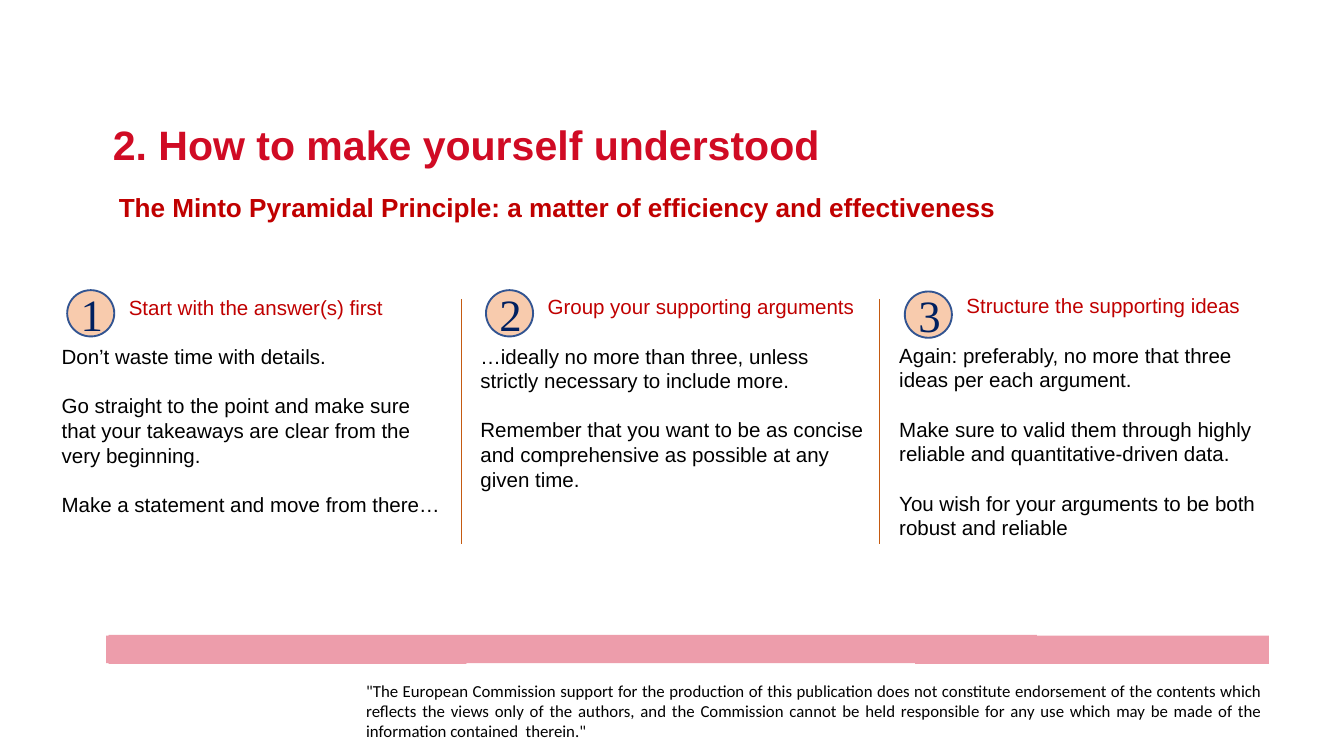
"""Build the slide on the Minto Pyramidal Principle."""
from dataclasses import dataclass

from lxml import etree
from pptx import Presentation
from pptx.dml.color import RGBColor
from pptx.enum.shapes import MSO_CONNECTOR, MSO_SHAPE
from pptx.enum.text import MSO_ANCHOR, MSO_AUTO_SIZE, PP_ALIGN
from pptx.oxml.ns import qn
from pptx.util import Cm, Pt

LEFT, CENTER, JUSTIFY = PP_ALIGN.LEFT, PP_ALIGN.CENTER, PP_ALIGN.JUSTIFY
TOP, MIDDLE = MSO_ANCHOR.TOP, MSO_ANCHOR.MIDDLE
NO_FIT = MSO_AUTO_SIZE.NONE
OVAL, STRAIGHT = MSO_SHAPE.OVAL, MSO_CONNECTOR.STRAIGHT


@dataclass(frozen=True)
class Theme:
    sans: str = "Arial"
    serif: str = "Times New Roman"
    small: str = "Calibri"
    title: str = "D00B24"
    accent: str = "C00000"
    text: str = "000000"
    digit: str = "002060"
    disc: str = "F8CBAD"
    ring: str = "325491"
    rule: str = "C55A11"
    band: str = "ED9DAB"
    title_size: int = 44
    sub_size: int = 28
    body_size: int = 22
    digit_size: int = 48
    note_size: int = 18
    leading: float = 1.2


class Page:
    def __init__(self, slide, theme):
        self.slide, self.theme = slide, theme

    def add_text(self, para, text, font, size, color, bold=False, align=LEFT):
        para.alignment = align
        run = para.add_run()
        run.text = text
        run.font.name, run.font.size, run.font.bold = font, Pt(size), bold
        run.font.color.rgb = RGBColor.from_string(color)

    def place(self, shape, left, top, width, height):
        shape.left, shape.top = Cm(left), Cm(top)
        shape.width, shape.height = Cm(width), Cm(height)

    def frame(self, left, top, width, height):
        box = self.slide.shapes.add_textbox(Cm(left), Cm(top), Cm(width), Cm(height))
        box.text_frame.word_wrap = True
        return box.text_frame

    def paint(self, shape, color):
        shape.shadow.inherit = False
        shape.fill.solid()
        shape.fill.fore_color.rgb = RGBColor.from_string(color)

    def title(self, text, *area):
        t, shape = self.theme, self.slide.shapes.title
        self.place(shape, *area)
        frame = shape.text_frame
        frame.auto_size, frame.vertical_anchor = NO_FIT, TOP
        para = frame.paragraphs[0]
        para.line_spacing = Pt(t.title_size * t.leading)
        self.add_text(para, text, t.sans, t.title_size, t.title, True)

    def lead(self, text, *area):
        t, para = self.theme, self.frame(*area).paragraphs[0]
        para.line_spacing = Pt(t.sub_size * t.leading)
        self.add_text(para, text, t.sans, t.sub_size, t.accent, True)

    def column(self, head, body, *area):
        t, frame = self.theme, self.frame(*area)
        gap = Pt(t.body_size * t.leading)
        para = frame.paragraphs[0]
        para.line_spacing = gap
        para._p.get_or_add_pPr().set("marL", str(Cm(2.54)))
        self.add_text(para, head, t.sans, t.body_size, t.accent)
        for text in body:
            para = frame.add_paragraph()
            para.line_spacing = para.space_before = gap
            self.add_text(para, text, t.sans, t.body_size, t.text)

    def badge(self, text, left, top, width, height):
        t = self.theme
        disc = self.slide.shapes.add_shape(OVAL, Cm(left), Cm(top), Cm(width), Cm(height))
        self.paint(disc, t.disc)
        disc.line.color.rgb = RGBColor.from_string(t.ring)
        disc.line.width = Pt(2)
        disc.text_frame.vertical_anchor = MIDDLE
        self.add_text(disc.text_frame.paragraphs[0], text, t.serif, t.digit_size,
                      t.digit, align=CENTER)

    def rule(self, left, top, bottom):
        line = self.slide.shapes.add_connector(
            STRAIGHT, Cm(left), Cm(top), Cm(left), Cm(bottom))
        line.line.color.rgb = RGBColor.from_string(self.theme.rule)
        line.line.width = Pt(0.75)
        etree.SubElement(line._element.spPr, qn("a:effectLst"))

    def band(self, points):
        start, *rest = [(Cm(x), Cm(y)) for x, y in points]
        outline = self.slide.shapes.build_freeform(*start)
        outline.add_line_segments(rest)
        shape = outline.convert_to_shape()
        self.paint(shape, self.theme.band)
        shape.line.fill.background()

    def note(self, text, *area):
        t, frame = self.theme, self.frame(*area)
        frame.margin_left = frame.margin_right = 0
        frame.margin_top = frame.margin_bottom = 0
        para = frame.paragraphs[0]
        para.line_spacing = 0.98
        self.add_text(para, text, t.small, t.note_size, t.text, align=JUSTIFY)


BAND = [
    (47.96, 24.03), (39.19, 24.03), (39.19, 24), (4.11, 24), (4.11, 24.03),
    (4.01, 24.03), (4.01, 25.07), (4.11, 25.07), (4.11, 25.1), (17.63, 25.1),
    (17.63, 25.07), (34.59, 25.07), (34.59, 25.1), (47.96, 25.1),
]
NOTE = (
    '"The European Commission support for the production of this publication '
    "does not constitute endorsement of the contents which reflects the views "
    "only of the authors, and the Commission cannot be held responsible for any "
    'use which may be made of the information contained  therein."'
)
COLUMNS = [
    ("Start with the answer(s) first", 11.02, 10.97, 8.71, [
        "Don’t waste time with details.",
        "Go straight to the point and make sure that your takeaways are clear "
        "from the very beginning.",
        "Make a statement and move from there…",
    ]),
    ("Group your supporting arguments", 11, 10.97, 7.77, [
        "…ideally no more than three, unless strictly necessary to include more.",
        "Remember that you want to be as concise and comprehensive as possible "
        "at any given time.",
    ]),
    ("Structure the supporting ideas", 10.97, 11.02, 9.65, [
        "Again: preferably, no more that three ideas per each argument.",
        "Make sure to valid them through highly reliable and "
        "quantitative-driven data.",
        "You wish for your arguments to be both robust and reliable",
    ]),
]
STEP = 15.83


def main():
    deck = Presentation()
    deck.slide_width, deck.slide_height = Cm(50.8), Cm(28.58)
    page = Page(deck.slides.add_slide(deck.slide_layouts[5]), Theme())
    page.band(BAND)
    page.note(NOTE, 13.84, 25.78, 33.86, 1.93)
    page.title("2. How to make yourself understood", 4.01, 4.37, 34.19, 2.13)
    page.lead("The Minto Pyramidal Principle: a matter of efficiency and effectiveness",
              4.24, 7.11, 36.63, 3.84)
    for i, (head, top, disc_top, height, body) in enumerate(COLUMNS):
        shift = i * STEP
        page.column(head, body, 2.08 + shift, top, 14.99, height)
        page.badge(str(i + 1), 2.54 + shift, disc_top, 1.78, 1.75)
        if i:
            page.rule(1.59 + shift, 11.3, 20.57)
    deck.save("out.pptx")


if __name__ == "__main__":
    main()
